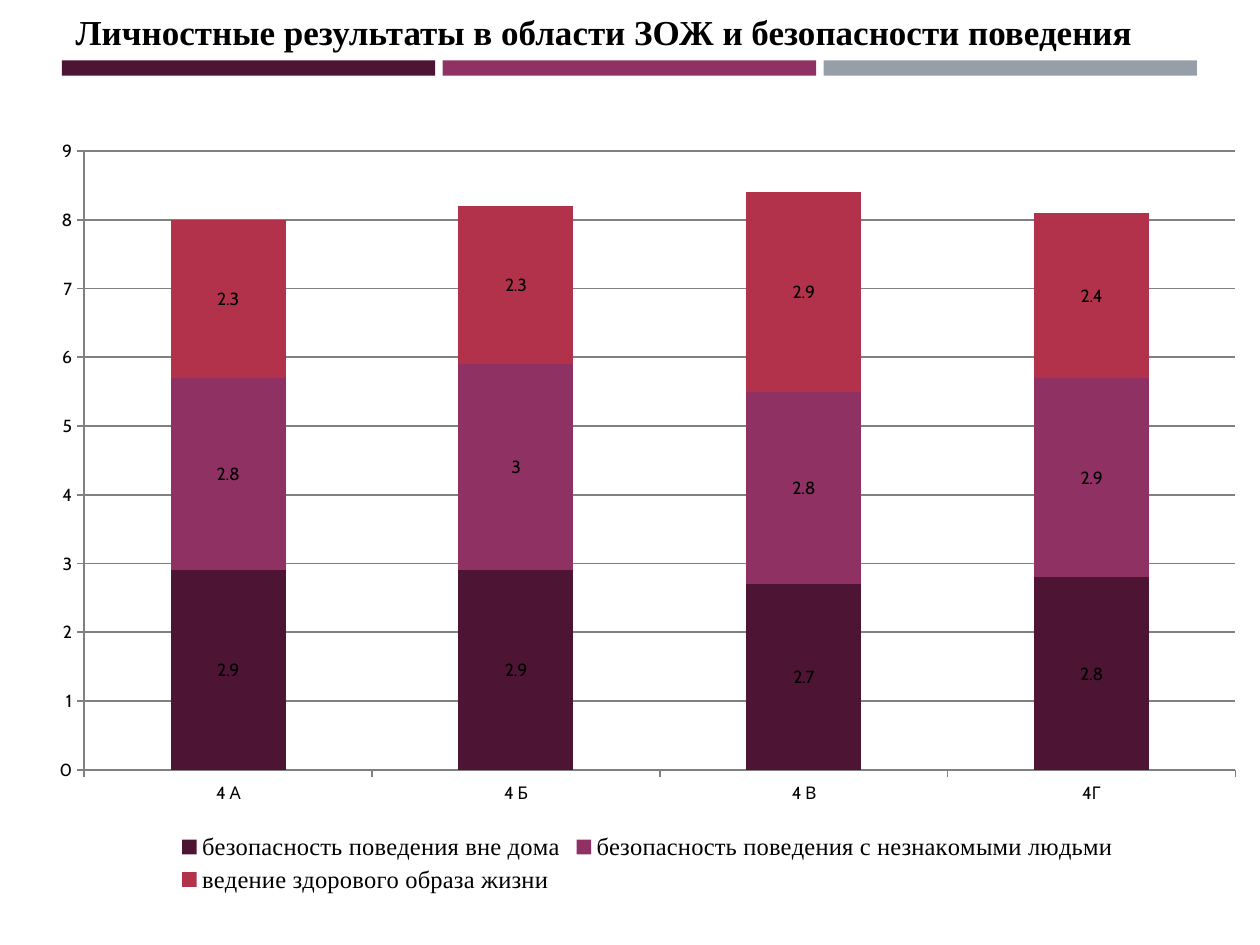
import pptx
import pptx.chart.data
import pptx.dml.color
import pptx.enum.chart
import pptx.enum.shapes
import pptx.enum.text
import pptx.oxml
import pptx.oxml.ns
import pptx.util

RGBColor = pptx.dml.color.RGBColor
PLUM = RGBColor(0x4D, 0x14, 0x34)
PURPLE = RGBColor(0x90, 0x31, 0x63)
CRIMSON = RGBColor(0xB2, 0x32, 0x4B)
STEEL = RGBColor(0x96, 0x9F, 0xA7)
BLACK = RGBColor(0, 0, 0)
GRAY = RGBColor(0x80, 0x80, 0x80)

SERIF = "Times New Roman"
HEADING = "Личностные результаты в области ЗОЖ и безопасности поведения"
CLASSES = ["4 А", "4 Б", "4 В", "4Г"]
RESULTS = [
    ("безопасность поведения вне дома", [2.9, 2.9, 2.7, 2.8], PLUM),
    ("безопасность поведения с незнакомыми людьми", [2.8, 3, 2.8, 2.9], PURPLE),
    ("ведение здорового образа жизни", [2.3, 2.3, 2.9, 2.4], CRIMSON),
]


def inches(*lengths):
    return [pptx.util.Inches(length) for length in lengths]


def set_font(font, name, size):
    font.name = name
    font.size = pptx.util.Pt(size)
    font.color.rgb = BLACK


def add_stripes(page, box, colors, gap):
    left, top, width, height = box
    stripe_width = (width - gap * (len(colors) - 1)) / len(colors)
    for column, color in enumerate(colors):
        stripe = page.shapes.add_shape(
            pptx.enum.shapes.MSO_SHAPE.RECTANGLE,
            *inches(left + column * (stripe_width + gap), top, stripe_width, height))
        stripe.shadow.inherit = False
        stripe.fill.solid()
        stripe.fill.fore_color.rgb = color
        stripe.line.fill.background()


def place_title(page, box):
    title = page.shapes.title
    title.left, title.top, title.width, title.height = inches(*box)
    frame = title.text_frame
    frame.word_wrap = False
    frame.auto_size = pptx.enum.text.MSO_AUTO_SIZE.SHAPE_TO_FIT_TEXT
    frame.vertical_anchor = pptx.enum.text.MSO_ANCHOR.MIDDLE
    para = frame.paragraphs[0]
    para.alignment = pptx.enum.text.PP_ALIGN.LEFT
    para._p.get_or_add_pPr().set("indent", str(pptx.util.Inches(0.49)))
    span = para.add_run()
    span.text = HEADING
    span.font.bold = True
    set_font(span.font, SERIF, 20)


def set_plot_box(chart, shares):
    plot_area = chart._chartSpace.chart.plotArea
    for old_layout in plot_area.findall(pptx.oxml.ns.qn("c:layout")):
        plot_area.remove(old_layout)
    modes = '<c:layoutTarget val="inner"/><c:xMode val="edge"/><c:yMode val="edge"/>'
    sizes = "".join(f'<c:{key} val="{share}"/>' for key, share in zip("xywh", shares))
    plot_area.insert(0, pptx.oxml.parse_xml(
        f'<c:layout {pptx.oxml.ns.nsdecls("c")}>'
        f"<c:manualLayout>{modes}{sizes}</c:manualLayout></c:layout>"))


def style_line(line):
    line.color.rgb = GRAY
    line.width = pptx.util.Pt(1)


def add_results_chart(page, box):
    chart_data = pptx.chart.data.CategoryChartData()
    chart_data.categories = CLASSES
    for name, values, color in RESULTS:
        chart_data.add_series(name, values)
    chart = page.shapes.add_chart(
        pptx.enum.chart.XL_CHART_TYPE.COLUMN_STACKED, *inches(*box), chart_data).chart
    chart.has_title = False
    set_font(chart.font, "Cabin", 10)
    set_plot_box(chart, (0.04, 0.034, 0.94, 0.8))

    plot = chart.plots[0]
    plot.vary_by_categories = False
    plot.gap_width = 150
    plot.overlap = 100
    for series, (name, values, color) in zip(plot.series, RESULTS):
        series.format.fill.solid()
        series.format.fill.fore_color.rgb = color
        labels = series.data_labels
        labels.show_value = True
        labels.position = pptx.enum.chart.XL_LABEL_POSITION.CENTER
        set_font(labels.font, "Cabin", 10)

    for axis in (chart.category_axis, chart.value_axis):
        axis.major_tick_mark = pptx.enum.chart.XL_TICK_MARK.OUTSIDE
        axis.minor_tick_mark = pptx.enum.chart.XL_TICK_MARK.NONE
        style_line(axis.format.line)
    chart.value_axis.minimum_scale = 0
    chart.value_axis.maximum_scale = 9
    chart.value_axis.major_unit = 1
    chart.value_axis.has_major_gridlines = True
    style_line(chart.value_axis.major_gridlines.format.line)

    chart.has_legend = True
    chart.legend.position = pptx.enum.chart.XL_LEGEND_POSITION.BOTTOM
    chart.legend.include_in_layout = False
    set_font(chart.legend.font, SERIF, 14)


def main():
    deck = pptx.Presentation()
    deck.slide_width, deck.slide_height = inches(10, 7.5)
    page = deck.slides.add_slide(deck.slide_layouts[5])
    add_stripes(page, (0.49, 0.48, 9.01, 0.12), [PLUM, PURPLE, STEEL], 0.06)
    place_title(page, (0.01, 0.03, 9.15, 0.44))
    add_results_chart(page, (0.28, 0.99, 9.72, 6.14))
    deck.save("out.pptx")


if __name__ == "__main__":
    main()
